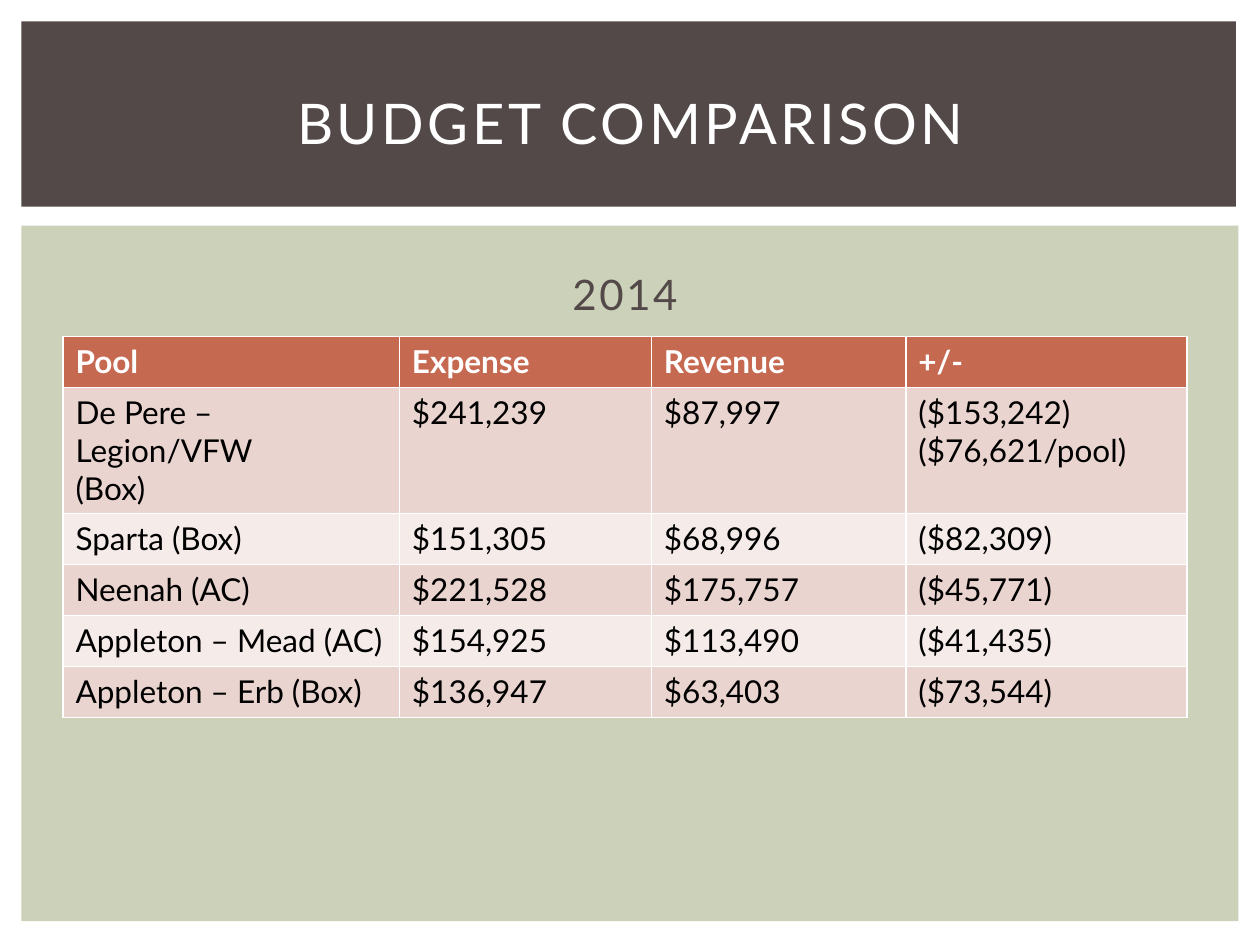
from pptx import Presentation
from pptx.dml.color import RGBColor
from pptx.enum.shapes import MSO_SHAPE
from pptx.enum.text import MSO_ANCHOR, PP_ALIGN
from pptx.util import Inches, Pt

RECT = MSO_SHAPE.RECTANGLE
CENTER = PP_ALIGN.CENTER
MIDDLE, BOTTOM = MSO_ANCHOR.MIDDLE, MSO_ANCHOR.BOTTOM
BROWN, SAGE, RUST, WHITE = "534949", "CCD1B9", "C66951", "FFFFFF"
BANDS = ["EAD4D0", "F5EBE9"]


def rgb(value):
    return RGBColor.from_string(value)


def style(tf, size, color, bold=False, align=None, spacing=None):
    for p in tf.paragraphs:
        p.alignment = align
        for r in p.runs:
            r.font.name, r.font.size, r.font.bold = "Lato", Pt(size), bold
            r.font.color.rgb = rgb(color)
            if spacing:
                r.font._element.set("spc", str(spacing))


prs = Presentation()
prs.slide_width, prs.slide_height = Inches(10), Inches(7.5)
s = prs.slides.add_slide(prs.slide_layouts[5])
margin = Inches(0.17)
left, width = Inches(0.5), Inches(8.92)

# Content panel and title banner
for top, w, h, color in [(1.79, 9.66, 5.52, SAGE), (0.17, 9.64, 1.47, BROWN)]:
    sp = s.shapes.add_shape(RECT, margin, Inches(top), Inches(w), Inches(h))
    sp.shadow.inherit = False
    sp.fill.solid()
    sp.fill.fore_color.rgb = rgb(color)
    sp.line.fill.background()

# Title, brought in front of the banner
title = s.shapes.title
title.left, title.top = Inches(0.42), Inches(0.39)
title.width, title.height = Inches(9.17), Inches(1.15)
tf = title.text_frame
tf.text = "BUDGET COMPARISON"
tf.vertical_anchor = MIDDLE
style(tf, 32, WHITE, align=CENTER, spacing=200)
s.shapes._spTree.append(title._element)

# Year heading
tf = s.shapes.add_textbox(left, Inches(1.88), width, Inches(0.7)).text_frame
tf.word_wrap = True
tf.vertical_anchor = BOTTOM
tf.text = "2014"
style(tf, 24, BROWN, align=CENTER, spacing=150)

# Budget table
rows = [
    ["Pool", "Expense", "Revenue", "+/-"],
    ["De Pere – Legion/VFW\n(Box)", "$241,239", "$87,997", "($153,242)\n($76,621/pool)"],
    ["Sparta (Box)", "$151,305", "$68,996", "($82,309)"],
    ["Neenah (AC)", "$221,528", "$175,757", "($45,771)"],
    ["Appleton – Mead (AC)", "$154,925", "$113,490", "($41,435)"],
    ["Appleton – Erb (Box)", "$136,947", "$63,403", "($73,544)"],
]
col_widths = [2.67, 2, 2.02, 2.23]
row_height = Inches(0.405)
table = s.shapes.add_table(len(rows), len(col_widths), left, Inches(2.67),
                           width, row_height * len(rows)).table
for column, w in zip(table.columns, col_widths):
    column.width = Inches(w)
for i, values in enumerate(rows):
    table.rows[i].height = row_height
    header = i == 0
    for j, value in enumerate(values):
        cell = table.cell(i, j)
        cell.fill.solid()
        cell.fill.fore_color.rgb = rgb(RUST if header else BANDS[(i - 1) % 2])
        cell.text_frame.text = value
        style(cell.text_frame, 18, WHITE if header else "000000", bold=header)

prs.save("out.pptx")
